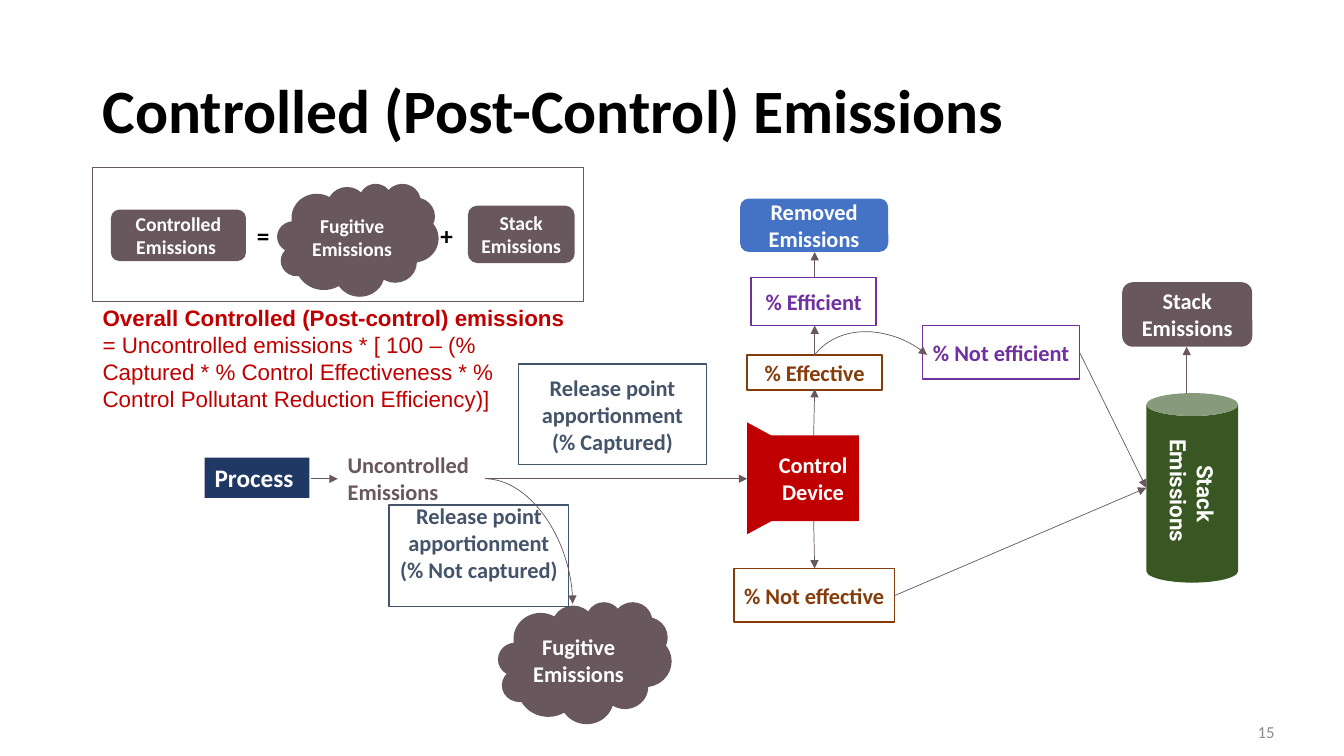
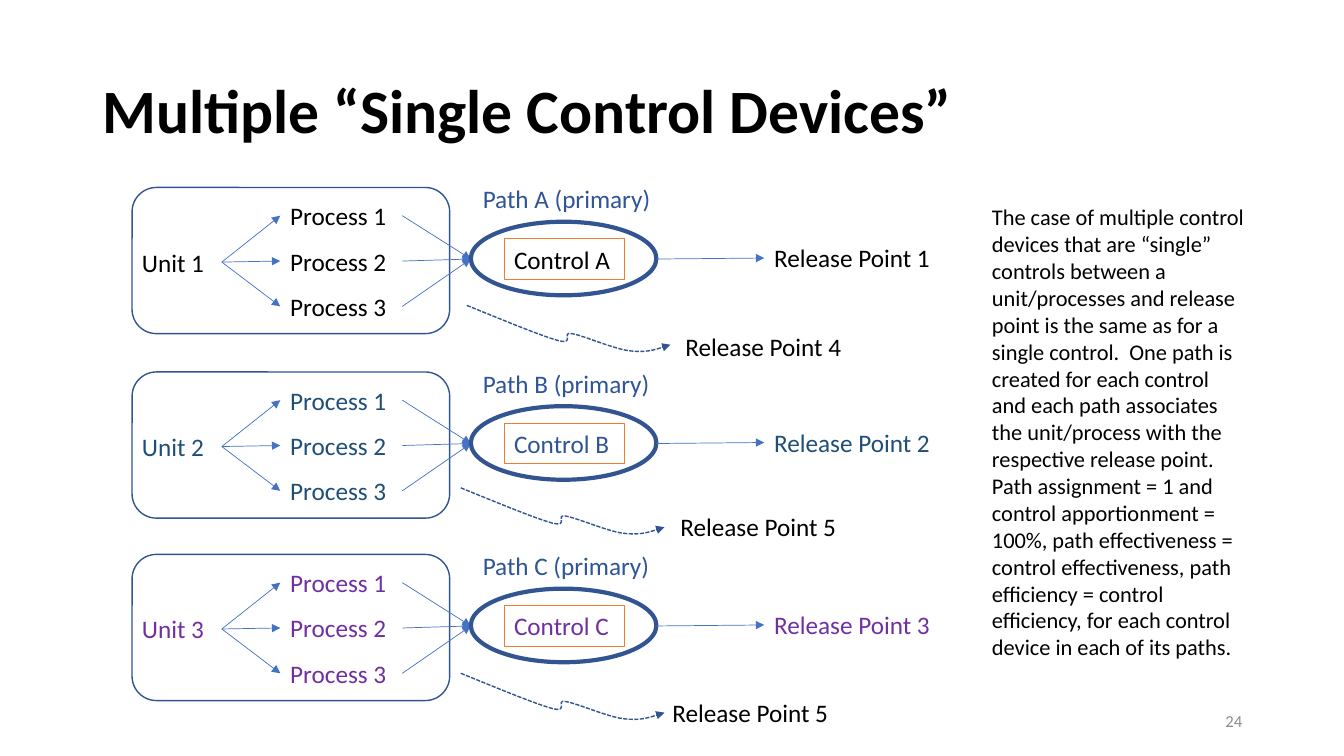
from dataclasses import dataclass

from lxml.etree import SubElement
from pptx import Presentation
from pptx.dml.color import RGBColor
from pptx.enum.dml import MSO_LINE
from pptx.enum.shapes import MSO_CONNECTOR, MSO_SHAPE
from pptx.enum.text import MSO_ANCHOR, PP_ALIGN
from pptx.oxml.ns import qn
from pptx.util import Inches, Pt


@dataclass(frozen=True)
class Theme:
    """Colours, fonts and type sizes shared by the slides."""

    black: str = "000000"
    white: str = "FFFFFF"
    number: str = "8C8C8C"
    taupe: str = "68585D"
    navy: str = "203864"
    slate: str = "44546A"
    brown: str = "843C0B"
    purple: str = "7030A0"
    red: str = "C00000"
    green: str = "385723"
    blue: str = "4472C4"
    outline: str = "325491"
    path_blue: str = "2F5597"
    unit_blue: str = "1F4E79"
    orange: str = "ED7D31"
    font: str = "Calibri"
    formula_font: str = "Arial"
    stack_font: str = "Roboto"
    title: int = 44
    large: int = 18
    body: int = 16
    small: int = 14
    tiny: int = 12


T = Theme()
WAVE = [
    (0.37, 0.15), (0.73, 0.3), (0.91, 0.35),
    (1.08, 0.39), (0.93, 0.26), (1.04, 0.28),
    (1.16, 0.3), (1.45, 0.43), (1.61, 0.45),
    (1.78, 0.47), (1.9, 0.43), (2.02, 0.39),
]


def rgb(color):
    """Turn a hex string into a colour."""
    return RGBColor.from_string(color)


def add_run(p, text, size, color, bold=False, font=T.font):
    """Append one formatted run to a paragraph."""
    r = p.add_run()
    r.text = text
    r.font.name, r.font.size, r.font.bold = font, Pt(size), bold
    r.font.color.rgb = rgb(color)


def write(sp, text, size, color, bold=False, font=T.font,
          align=PP_ALIGN.LEFT, anchor=MSO_ANCHOR.TOP):
    """Fill a shape with one paragraph per line of text."""
    tf = sp.text_frame
    tf.word_wrap = True
    tf.vertical_anchor = anchor
    for i, line in enumerate(text.split("\n")):
        p = tf.add_paragraph() if i else tf.paragraphs[0]
        p.alignment = align
        add_run(p, line, size, color, bold, font)


def text_box(s, box, text, size=T.large, color=T.black, **style):
    """Add a plain text box."""
    sp = s.shapes.add_textbox(*map(Inches, box))
    write(sp, text, size, color, **style)
    return sp


def shape(s, kind, box, fill=None, line=None, width=1):
    """Add a preset shape with an optional fill and outline."""
    sp = s.shapes.add_shape(kind, *map(Inches, box))
    sp.shadow.inherit = False
    if fill:
        sp.fill.solid()
        sp.fill.fore_color.rgb = rgb(fill)
    else:
        sp.fill.background()
    if line:
        sp.line.color.rgb = rgb(line)
        sp.line.width = Pt(width)
    else:
        sp.line.fill.background()
    return sp


def node(s, kind, box, text, fill, size=T.body, font=T.font):
    """Add a filled shape with centred bold white text."""
    sp = shape(s, kind, box, fill)
    write(sp, text, size, T.white, True, font, PP_ALIGN.CENTER, MSO_ANCHOR.MIDDLE)
    return sp


def share_box(s, box, text, color):
    """Add an outlined box whose bold text matches its outline."""
    sp = shape(s, MSO_SHAPE.RECTANGLE, box, line=color)
    write(sp, text, T.body, color, True, align=PP_ALIGN.CENTER, anchor=MSO_ANCHOR.MIDDLE)
    return sp


def arrowhead(sp):
    """Put a triangle at the end of a line."""
    SubElement(sp.line._get_or_add_ln(), qn("a:tailEnd"), type="triangle")


def arrow(s, start, end, color=T.taupe, curved=False):
    """Add a thin connector with an arrowhead."""
    kind = MSO_CONNECTOR.CURVE if curved else MSO_CONNECTOR.STRAIGHT
    cn = s.shapes.add_connector(kind, *map(Inches, (*start, *end)))
    cn.line.color.rgb = rgb(color)
    cn.line.width = Pt(0.5)
    arrowhead(cn)
    sp_pr = cn._element.spPr
    SubElement(sp_pr, qn("a:effectLst"))
    if curved:
        sp_pr.find(qn("a:prstGeom")).set("prst", "curvedConnector2")


def curve_segments(sp):
    """Turn each three line segments of a freeform into one cubic curve."""
    lines = list(sp._element.iter(qn("a:lnTo")))
    outline = lines[0].getparent()
    for i in range(0, len(lines), 3):
        curve = SubElement(outline, qn("a:cubicBezTo"))
        for line in lines[i:i + 3]:
            curve.append(line[0])
            outline.remove(line)


def wave(s, x, y):
    """Add the dashed wavy arrow of a bypass."""
    fb = s.shapes.build_freeform(Inches(x), Inches(y))
    fb.add_line_segments([(Inches(x + dx), Inches(y + dy)) for dx, dy in WAVE], close=False)
    sp = fb.convert_to_shape()
    curve_segments(sp)
    sp.shadow.inherit = False
    sp.fill.background()
    sp.line.color.rgb = rgb(T.outline)
    sp.line.width = Pt(1)
    sp.line.dash_style = MSO_LINE.SQUARE_DOT
    arrowhead(sp)


def new_slide(prs, title, number, number_box):
    """Add a blank slide with its title and number."""
    s = prs.slides.add_slide(prs.slide_layouts[6])
    sp = text_box(s, (0.92, 0.4, 11.5, 1.45), title, T.title, bold=True,
                  anchor=MSO_ANCHOR.MIDDLE)
    sp.text_frame.paragraphs[0].line_spacing = 0.9
    text_box(s, number_box, number, T.tiny, T.number, align=PP_ALIGN.RIGHT,
             anchor=MSO_ANCHOR.MIDDLE)
    return s


def equation(s):
    """Draw the framed sum and the formula below it."""
    shape(s, MSO_SHAPE.RECTANGLE, (0.92, 1.66, 4.87, 1.33), line=T.taupe)
    for kind, box, text in (
        (MSO_SHAPE.ROUNDED_RECTANGLE, (1.1, 2.08, 1.34, 0.51), "Controlled Emissions "),
        (MSO_SHAPE.CLOUD, (2.75, 1.82, 1.6, 1.12), "Fugitive Emissions"),
        (MSO_SHAPE.ROUNDED_RECTANGLE, (4.64, 2.04, 1.06, 0.57), "Stack Emissions"),
    ):
        node(s, kind, box, text, T.taupe, T.small)
    for x, sign in ((2.45, "="), (4.27, "+")):
        text_box(s, (x, 2.14, 0.3, 0.4), sign, bold=True)
    sp = text_box(s, (0.92, 2.97, 4.8, 1.18), "Overall Controlled (Post-control) emissions ",
                  T.body, T.red, bold=True, font=T.formula_font)
    add_run(sp.text_frame.paragraphs[0],
            "= Uncontrolled emissions * [ 100 – (% Captured * % Control Effectiveness"
            " * % Control Pollutant Reduction Efficiency)]",
            T.body, T.red, font=T.formula_font)


def emission_flow(s):
    """Draw the flow from the process to the stack."""
    for kind, box, text, fill in (
        (MSO_SHAPE.CLOUD, (4.94, 5.97, 1.72, 1.21), "Fugitive Emissions", T.taupe),
        (MSO_SHAPE.ROUNDED_RECTANGLE, (7.34, 1.97, 1.47, 0.53), "Removed Emissions", T.blue),
        (MSO_SHAPE.ROUNDED_RECTANGLE, (11.13, 2.8, 1.29, 0.64), "Stack Emissions", T.taupe),
    ):
        node(s, kind, box, text, fill)
    sp = shape(s, MSO_SHAPE.RECTANGLE, (2.03, 4.54, 1.04, 0.4), T.navy)
    write(sp, "Process", T.large, T.white, True)
    text_box(s, (3.35, 4.43, 1.46, 0.64), "Uncontrolled Emissions", T.body, T.taupe, bold=True)
    stack = node(s, MSO_SHAPE.CAN, (11.37, 3.9, 0.91, 1.88), "Stack Emissions ", T.green,
                 font=T.stack_font)
    stack.text_frame._txBody.bodyPr.set("vert", "vert")

    for box, text, color in (
        ((5.14, 3.61, 1.87, 1), "Release point apportionment (% Captured)", T.slate),
        ((7.41, 3.52, 1.34, 0.35), "% Effective", T.brown),
        ((7.28, 5.64, 1.59, 0.53), "% Not effective", T.brown),
        ((7.45, 2.75, 1.24, 0.48), "% Efficient", T.purple),
        ((9.15, 3.23, 1.56, 0.53), "% Not efficient", T.purple),
    ):
        share_box(s, box, text, color)
    missed = share_box(s, (3.86, 5.01, 1.78, 1.01),
                       "Release point apportionment (% Not captured)", T.slate)
    missed.text_frame.margin_bottom = Inches(0.31)

    for start, end in (
        ((3.08, 4.75), (3.35, 4.75)),
        ((4.81, 4.75), (7.41, 4.75)),
        ((8.07, 4.32), (8.08, 3.86)),
        ((8.07, 5.17), (8.08, 5.64)),
        ((8.08, 3.52), (8.08, 3.23)),
        ((8.08, 2.75), (8.08, 2.5)),
        ((8.87, 5.91), (11.37, 4.84)),
        ((10.71, 3.5), (11.37, 4.84)),
        ((11.77, 3.9), (11.77, 3.44)),
    ):
        arrow(s, start, end)
    arrow(s, (4.81, 4.75), (5.68, 5.99), curved=True)
    arc = shape(s, MSO_SHAPE.ARC, (8.07, 3.19, 1.38, 1.73), line=T.taupe, width=0.5)
    arc.rotation = 309.2
    arc.adjustments[0], arc.adjustments[1] = 161.07, 0.02
    arrowhead(arc)

    funnel = shape(s, MSO_SHAPE.FLOWCHART_MANUAL_OPERATION, (7.06, 4.54, 1.11, 0.41), T.red)
    funnel.rotation = 270
    node(s, MSO_SHAPE.RECTANGLE, (7.61, 4.32, 0.91, 0.85), "Control\nDevice", T.red)


def control_path(s, y, letter, number, color, control_color):
    """Draw one unit, its processes, control and release point."""
    shape(s, MSO_SHAPE.ROUNDED_RECTANGLE, (1.31, y, 3.15, 1.45), line=T.outline)
    text_box(s, (1.31, y + 0.54, 0.89, 0.4), f"Unit {number}", color=color)
    control = (4.67, y + 0.71)
    for i in range(3):
        top = y + 0.08 + 0.45 * i
        text_box(s, (2.78, top, 1.21, 0.4), f"Process {i + 1}", color=color)
        arrow(s, (2.2, y + 0.74), (2.78, top + 0.2), T.blue)
        arrow(s, (3.99, top + 0.2), control, T.blue)
    sp = shape(s, MSO_SHAPE.RECTANGLE, (5, y + 0.51, 1.19, 0.4), line=T.orange, width=0.75)
    write(sp, f"Control {letter}", T.large, control_color)
    shape(s, MSO_SHAPE.OVAL, (4.67, y + 0.34, 1.84, 0.73), line=T.outline, width=3)
    text_box(s, (4.69, y - 0.09, 2, 0.4), f"Path {letter} (primary)", color=T.path_blue)
    arrow(s, (6.51, y + 0.71), (7.58, y + 0.7), T.blue)
    text_box(s, (7.58, y + 0.5, 1.84, 0.4), f"Release Point {number}", color=color)


def bypass(s, start, label_at, number):
    """Draw a wavy bypass and its release point."""
    wave(s, *start)
    text_box(s, (*label_at, 1.84, 0.4), f"Release Point {number}")


def post_control_slide(prs):
    """Build the slide on controlled emissions."""
    s = new_slide(prs, "Controlled (Post-Control) Emissions", "15", (10.11, 7.06, 2.63, 0.4))
    emission_flow(s)
    equation(s)


def single_controls_slide(prs):
    """Build the slide on several single control devices."""
    s = new_slide(prs, "Multiple “Single Control Devices”", "24", (9.42, 6.95, 3, 0.4))
    rows = (
        (1.86, "A", T.black, T.black),
        (3.69, "B", T.unit_blue, T.path_blue),
        (5.5, "C", T.purple, T.purple),
    )
    for number, (y, letter, color, control_color) in enumerate(rows, 1):
        control_path(s, y, letter, number, color, control_color)
    bypass(s, (4.63, 3.03), (6.7, 3.24), 4)
    bypass(s, (4.57, 4.84), (6.65, 5.02), 5)
    bypass(s, (4.57, 6.68), (6.57, 6.87), 5)
    text_box(s, (9.74, 1.97, 2.71, 4.68),
             "The case of multiple control devices that are “single” controls between a "
             "unit/processes and release point is the same as for a single control.  One path "
             "is created for each control and each path associates the unit/process with the "
             "respective release point.\n"
             "Path assignment = 1 and control apportionment = 100%, path effectiveness = "
             "control effectiveness, path efficiency = control efficiency, for each control "
             "device in each of its paths.", T.body)


def main():
    """Build and save the presentation."""
    prs = Presentation()
    prs.slide_width, prs.slide_height = Inches(13.33), Inches(7.5)
    post_control_slide(prs)
    single_controls_slide(prs)
    prs.save("out.pptx")


if __name__ == "__main__":
    main()
